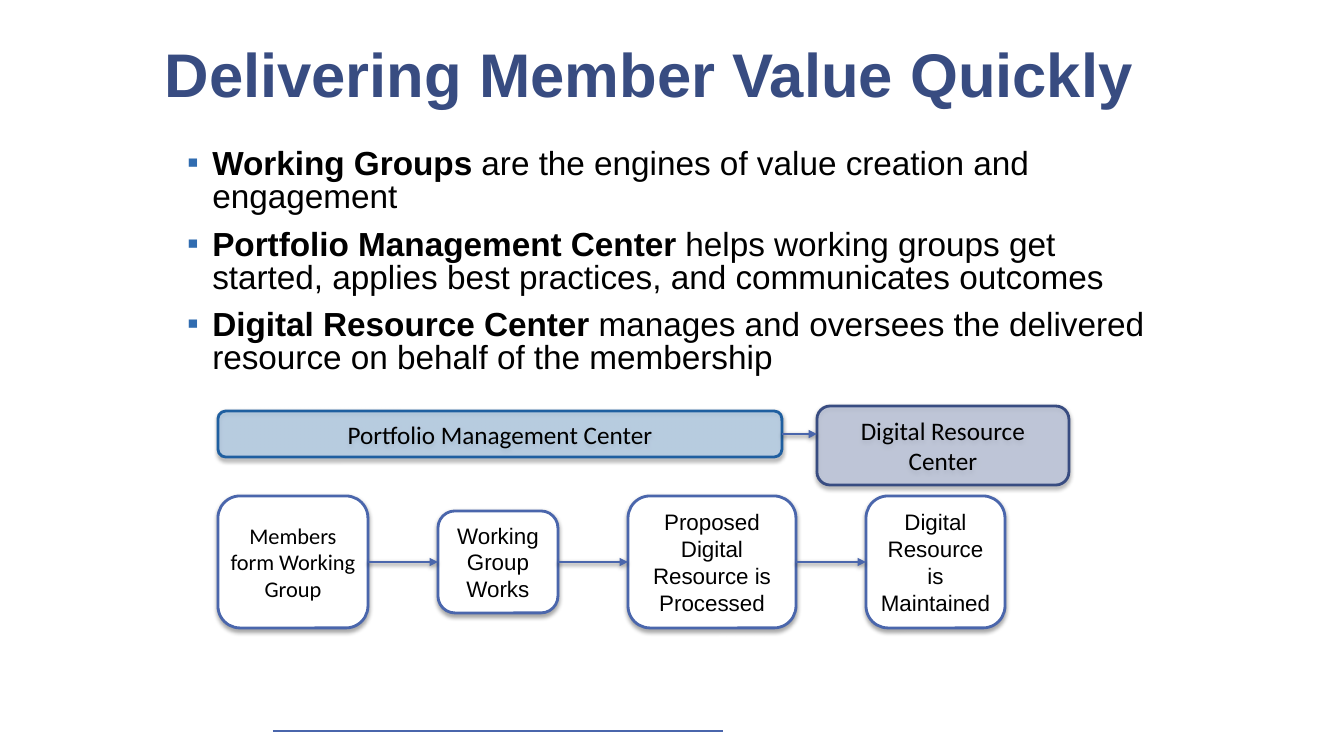
import pptx
import pptx.dml.color
import pptx.enum.shapes
import pptx.enum.text
import pptx.oxml
import pptx.oxml.ns
import pptx.util
from lxml import etree

PX = 914400 / 100.8  # EMU in one px
NAVY, BLUE, BLACK, WHITE = "384C81", "4A66AC", "000000", "FFFFFF"


def px(length):
    return pptx.util.Emu(round(length * PX))


def colour(value):
    return pptx.dml.color.RGBColor.from_string(value)


def add_element(parent, tag, **attributes):
    return etree.SubElement(parent, pptx.oxml.ns.qn(tag), **attributes)


class SlideBuilder:
    def __init__(self, slide):
        self.slide = slide

    def run(self, paragraph, text, font, size, text_colour=BLACK, bold=False):
        run = paragraph.add_run()
        run.text = text
        run.font.name = font
        run.font.size = pptx.util.Pt(size)
        run.font.bold = bold
        run.font.color.rgb = colour(text_colour)

    def place(self, placeholder, left, top, width, height):
        placeholder.left, placeholder.top = px(left), px(top)
        placeholder.width, placeholder.height = px(width), px(height)
        frame = placeholder.text_frame
        frame.word_wrap = True
        frame.auto_size = pptx.enum.text.MSO_AUTO_SIZE.NONE
        return frame

    def title(self, text, *box):
        frame = self.place(self.slide.shapes.title, *box)
        frame.vertical_anchor = pptx.enum.text.MSO_ANCHOR.MIDDLE
        paragraph = frame.paragraphs[0]
        paragraph.alignment = pptx.enum.text.PP_ALIGN.CENTER
        paragraph.line_spacing = 0.9
        self.run(paragraph, text, "Arial", 44, NAVY, True)

    def bullets(self, items, *box):
        frame = self.place(self.slide.placeholders[1], *box)
        for index, (lead, rest) in enumerate(items):
            paragraph = frame.add_paragraph() if index else frame.paragraphs[0]
            properties = paragraph._p.get_or_add_pPr()
            properties.set("marL", "228600")
            properties.set("indent", "-228600")
            bullet_colour = add_element(properties, "a:buClr")
            add_element(bullet_colour, "a:srgbClr", val="306CB0")
            add_element(properties, "a:buFont", typeface="Arial")
            add_element(properties, "a:buChar", char="▪")
            paragraph.line_spacing = 0.83
            paragraph.space_before = pptx.util.Pt(10 if index else 0)
            self.run(paragraph, lead, "Arial", 23.8, bold=True)
            self.run(paragraph, rest, "Arial", 23.8)

    def shadow(self, effects, distance, opacity):
        outer = add_element(effects, "a:outerShdw", blurRad="38100",
                            dist=str(pptx.util.Pt(distance)), dir="5400000",
                            algn="t", rotWithShape="0")
        black = add_element(outer, "a:srgbClr", val=BLACK)
        add_element(black, "a:alpha", val=str(opacity * 1000))

    def box(self, text, left, top, width, height, font, size,
            fill=WHITE, line=BLUE, opacity=100):
        shape = self.slide.shapes.add_shape(
            pptx.enum.shapes.MSO_SHAPE.ROUNDED_RECTANGLE,
            px(left), px(top), px(width), px(height))
        shape.fill.solid()
        shape.fill.fore_color.rgb = colour(fill)
        if opacity < 100:
            fill_colour = shape._element.spPr.find(".//" + pptx.oxml.ns.qn("a:srgbClr"))
            add_element(fill_colour, "a:alpha", val=str(opacity * 1000))
        shape.line.color.rgb = colour(line)
        shape.line.width = pptx.util.Pt(2)
        shape.shadow.inherit = False
        self.shadow(shape._element.spPr.find(pptx.oxml.ns.qn("a:effectLst")), 1.8, 35)
        frame = shape.text_frame
        frame.word_wrap = True
        frame.vertical_anchor = pptx.enum.text.MSO_ANCHOR.MIDDLE
        frame.margin_left = frame.margin_right = px(5)
        frame.margin_top = frame.margin_bottom = px(5)
        paragraph = frame.paragraphs[0]
        paragraph.alignment = pptx.enum.text.PP_ALIGN.CENTER
        self.run(paragraph, text, font, size)
        return shape

    def line(self, left, right, y, width):
        connector = self.slide.shapes.add_connector(
            pptx.enum.shapes.MSO_CONNECTOR.STRAIGHT, px(left), px(y), px(right), px(y))
        connector.line.color.rgb = colour(BLUE)
        connector.line.width = pptx.util.Pt(width)
        effects = add_element(connector._element.spPr, "a:effectLst")
        return connector, effects

    def arrow(self, left, right, y, start, end=None):
        connector, effects = self.line(left, right, y, 2)
        add_element(connector.line._get_or_add_ln(), "a:tailEnd", type="triangle")
        self.shadow(effects, 1.6, 38)
        connector.begin_connect(start, 3)
        if end is not None:
            connector.end_connect(end, 1)


def main():
    presentation = pptx.Presentation()
    presentation.slide_width, presentation.slide_height = px(1344), px(756)
    slide = presentation.slides.add_slide(presentation.slide_layouts[1])
    builder = SlideBuilder(slide)

    # Footer rule
    builder.line(273, 723, 731, 1)

    # Title and list
    builder.title("Delivering Member Value Quickly", 97, 36, 1105, 83)
    builder.bullets([
        ("Working Groups ", "are the engines of value creation and engagement"),
        ("Portfolio Management Center ",
         "helps working groups get started, applies best practices, "
         "and communicates outcomes"),
        ("Digital Resource Center ",
         "manages and oversees the delivered resource on behalf of the membership"),
    ], 177, 144, 989, 244)

    # Centers
    builder.box("Digital Resource Center", 817, 406, 252, 79,
                "Calibri", 18, "B5C1DF", NAVY, 58)
    portfolio = builder.box("Portfolio Management Center", 218, 411, 564, 46,
                            "Calibri", 18, "A9CCEE", "1F5FA0", 58)
    builder.arrow(782, 817, 434, portfolio)

    # Process steps, equally spaced on one axis
    axis, gap, left = 562, 70, 218
    previous = None
    for text, width, height, font in [
        ("Members form Working Group", 150, 132, "Calibri"),
        ("Working Group Works", 120, 102, "Arial"),
        ("Proposed Digital Resource is Processed", 168, 132, "Arial"),
        ("Digital Resource is Maintained", 139, 132, "Arial"),
    ]:
        step = builder.box(text, left, axis - height // 2, width, height, font, 16)
        if previous is not None:
            builder.arrow(left - gap, left, axis, previous, step)
        previous = step
        left += width + gap

    presentation.save("out.pptx")


if __name__ == "__main__":
    main()
